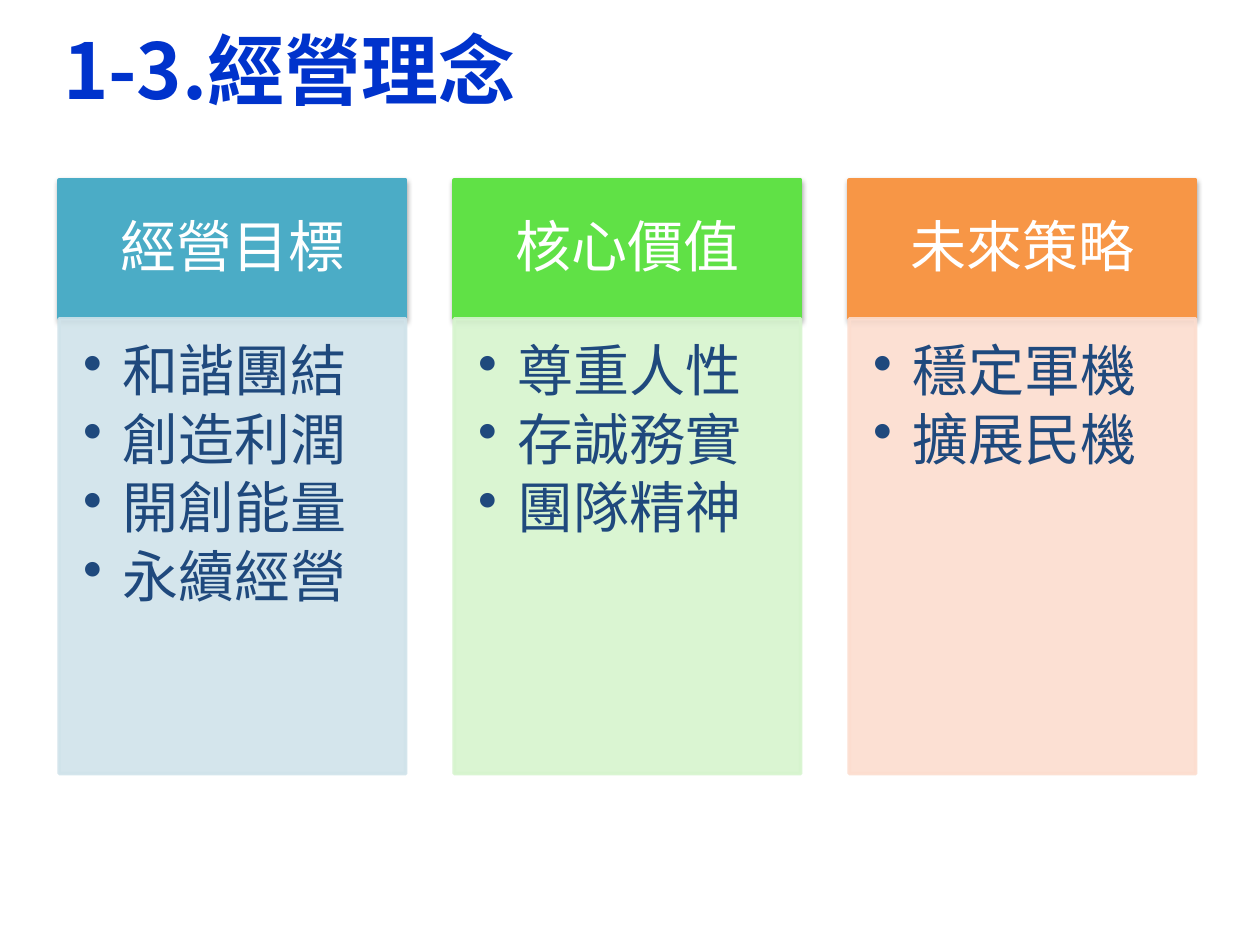
from dataclasses import dataclass
from lxml.etree import SubElement as Sub
from pptx import Presentation
from pptx.dml.color import RGBColor as RGB
from pptx.enum.shapes import MSO_SHAPE as Shape
from pptx.enum.text import MSO_ANCHOR as Anchor, PP_ALIGN as Align
from pptx.oxml.ns import qn
from pptx.util import Inches, Pt


@dataclass(frozen=True)
class Theme:
    """Colours, type sizes and font of the slide."""
    font: str = "Noto Sans CJK SC"
    title: str = "0033CC"
    head: str = "FFFFFF"
    body: str = "1F497D"
    big: int = 44
    size: int = 32


THEME = Theme()
COLUMNS = [
    ("經營目標", "4BACC6", "D0E3EA", ["和諧團結", "創造利潤", "開創能量", "永續經營"]),
    ("核心價值", "60E146", "D6F4CE", ["尊重人性", "存誠務實", "團隊精神"]),
    ("未來策略", "F79646", "FCDDCF", ["穩定軍機", "擴展民機"]),
]
LEFT, STEP, WIDTH = 0.47, 3.135, 2.75
TOP, HEAD, BODY = 1.43, 1.1, 3.61


def style(para, size, color, bold=False):
    """Format every run of a paragraph, East Asian font included."""
    for run in para.runs:
        font = run.font
        font.name, font.size, font.bold = THEME.font, Pt(size), bold
        font.color.rgb = RGB.from_string(color)
        Sub(run._r.get_or_add_rPr(), qn("a:ea"), typeface=THEME.font)


def inset(frame, left, top, right, bottom):
    """Set the inner margins of a text frame in inches."""
    frame.margin_left, frame.margin_top = Inches(left), Inches(top)
    frame.margin_right, frame.margin_bottom = Inches(right), Inches(bottom)


def add_box(slide, x, y, height, color):
    """Add a filled and outlined rectangle of column width."""
    box = slide.shapes.add_shape(
        Shape.RECTANGLE, Inches(x), Inches(y), Inches(WIDTH), Inches(height))
    box.shadow.inherit = False
    box.fill.solid()
    box.fill.fore_color.rgb = box.line.color.rgb = RGB.from_string(color)
    box.line.width = Pt(2)
    box.text_frame.word_wrap = True
    return box


def add_shadow(box):
    """Give a box a soft shadow straight below it."""
    glow = Sub(box._element.spPr.find(qn("a:effectLst")), qn("a:outerShdw"),
               blurRad=str(Pt(3.1)), dist=str(Pt(1.6)), dir="5400000",
               rotWithShape="0")
    tint = Sub(glow, qn("a:srgbClr"), val="000000")
    Sub(tint, qn("a:alpha"), val="38000")


def fade(box):
    """Make the fill and line of a box 90 percent opaque."""
    for tint in box._element.spPr.iter(qn("a:srgbClr")):
        Sub(tint, qn("a:alpha"), val="90000")


def add_bullet(para):
    """Give a paragraph a hanging round bullet."""
    props = para._p.get_or_add_pPr()
    props.set("marL", str(Inches(0.31)))
    props.set("indent", str(-Inches(0.31)))
    Sub(props, qn("a:buChar"), char="•")


def add_head(slide, x, text, color):
    """Add the heading box of a column."""
    box = add_box(slide, x, TOP, HEAD, color)
    add_shadow(box)
    frame = box.text_frame
    inset(frame, 0.25, 0.14, 0.25, 0.14)
    frame.vertical_anchor = Anchor.MIDDLE
    frame.text = text
    para = frame.paragraphs[0]
    para.alignment, para.line_spacing = Align.CENTER, 0.9
    style(para, THEME.size, THEME.head)


def add_list(slide, x, items, color):
    """Add the bulleted box of a column."""
    box = add_box(slide, x, TOP + HEAD, BODY, color)
    fade(box)
    frame = box.text_frame
    inset(frame, 0.19, 0.19, 0.25, 0.28)
    frame.vertical_anchor = Anchor.TOP
    frame.text = "\n".join(items)
    for para in frame.paragraphs:
        para.alignment, para.line_spacing = Align.LEFT, 0.9
        para.space_after = Pt(THEME.size * 0.15)
        add_bullet(para)
        style(para, THEME.size, THEME.body)


def set_title(slide, text):
    """Place and format the slide title."""
    title = slide.shapes.title
    title.left, title.top = Inches(0.5), Inches(0)
    title.width, title.height = Inches(9), Inches(0.94)
    frame = title.text_frame
    inset(frame, 0, 0.05, 0, 0)
    frame.vertical_anchor = Anchor.MIDDLE
    frame.text = text
    para = frame.paragraphs[0]
    para.alignment, para.line_spacing = Align.LEFT, Pt(60)
    style(para, THEME.big, THEME.title, True)


def main():
    """Build the slide and save it."""
    deck = Presentation()
    deck.slide_width, deck.slide_height = Inches(10), Inches(7.5)
    slide = deck.slides.add_slide(deck.slide_layouts[5])
    set_title(slide, "1-3.經營理念")
    for i, (head, dark, pale, items) in enumerate(COLUMNS):
        x = LEFT + i * STEP
        add_head(slide, x, head, dark)
        add_list(slide, x, items, pale)
    deck.save("out.pptx")


if __name__ == "__main__":
    main()
